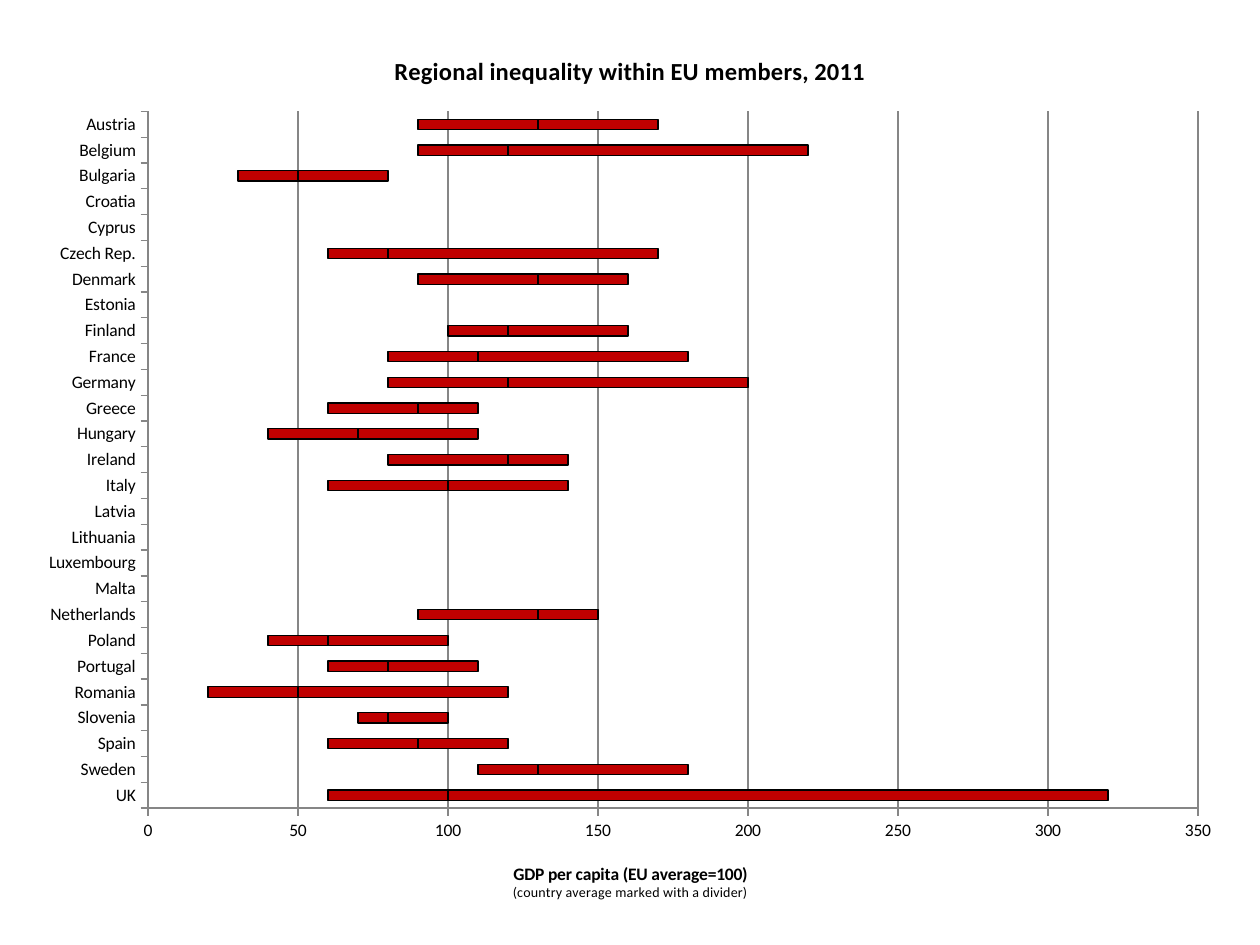
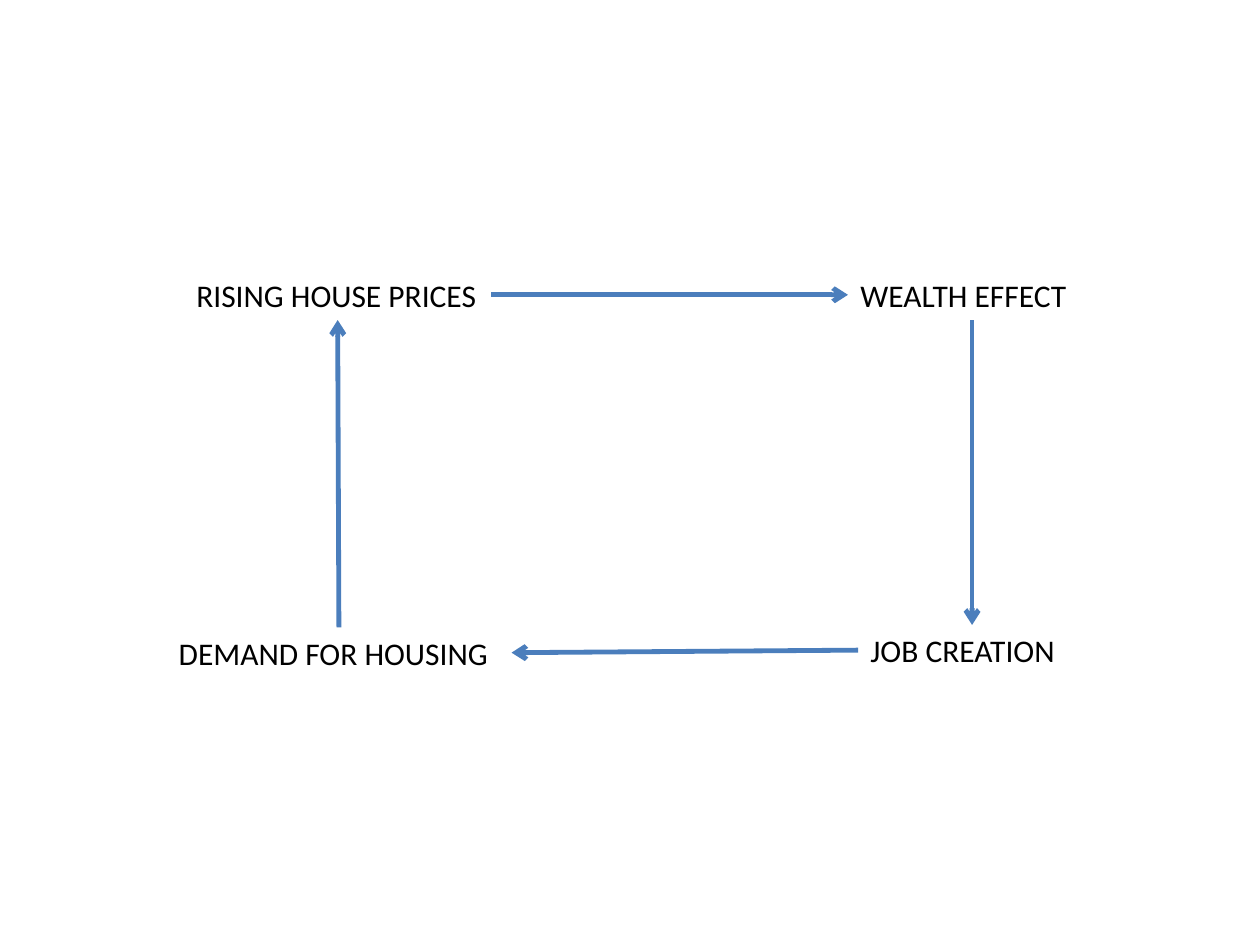
from collections import namedtuple

from lxml import etree
from pptx import Presentation
from pptx import util as u
from pptx.chart.data import CategoryChartData
from pptx.dml.color import RGBColor
from pptx.enum import chart as charts, shapes, text
from pptx.oxml import ns

# Boxes are measured in cells of a grid of 100 columns and 75 rows
Box = namedtuple("Box", "left top width height")

COLUMNS, ROWS = 100, 75
CELL = u.Inches(0.1)
FONT = "Calibri"
BLACK, RED, GREY, BLUE = "000000", "C00000", "868686", "4B7EBC"
TOP, LEFT, BOTTOM, RIGHT = range(4)

# Country: lowest region, step up to country average, step up to highest region
REGIONAL_GDP = {
    "UK": (60, 40, 220), "Sweden": (110, 20, 50), "Spain": (60, 30, 30),
    "Slovenia": (70, 10, 20), "Romania": (20, 30, 70),
    "Portugal": (60, 20, 30), "Poland": (40, 20, 40),
    "Netherlands": (90, 40, 20), "Malta": (90, 0, 0),
    "Luxembourg": (270, 0, 0), "Lithuania": (70, 0, 0),
    "Latvia": (60, 0, 0), "Italy": (60, 40, 40), "Ireland": (80, 40, 20),
    "Hungary": (40, 30, 40), "Greece": (60, 30, 20),
    "Germany": (80, 40, 80), "France": (80, 30, 70),
    "Finland": (100, 20, 40), "Estonia": (70, 0, 0),
    "Denmark": (90, 40, 30), "Czech Rep.": (60, 20, 90),
    "Cyprus": (90, 0, 0), "Croatia": (60, 0, 0), "Bulgaria": (30, 20, 30),
    "Belgium": (90, 30, 100), "Austria": (90, 40, 40),
}


def colour(value):
    return RGBColor.from_string(value)


def on_slide(box):
    """Turn a box in cells into lengths on the slide."""
    return [int(cells * CELL) for cells in box]


def style_font(font, size=10, bold=False, fill=BLACK):
    font.name, font.size, font.bold = FONT, u.Pt(size), bold
    font.color.rgb = colour(fill)


def write(paragraph, words, **style):
    run = paragraph.add_run()
    run.text = words
    style_font(run.font, **style)


def style_line(line, fill, width):
    line.color.rgb = colour(fill)
    line.width = u.Pt(width)


def place_chart_part(element, index, box, left, top, width=None, height=None):
    """Fix a title, or a plot area with its size, in cells from the chart's corner."""
    for old in element.findall(ns.qn("c:layout")):
        element.remove(old)
    settings = {"xMode": "edge", "yMode": "edge",
                "x": left / box.width, "y": top / box.height}
    if width:
        settings = {"layoutTarget": "inner", **settings,
                    "w": width / box.width, "h": height / box.height}
    layout = etree.Element(ns.qn("c:layout"))
    manual = etree.SubElement(layout, ns.qn("c:manualLayout"))
    for name, value in settings.items():
        etree.SubElement(manual, ns.qn("c:" + name)).set("val", str(value))
    element.insert(index, layout)


def add_inequality_chart(slide, box):
    data = CategoryChartData()
    data.categories = list(REGIONAL_GDP)
    for number, values in enumerate(zip(*REGIONAL_GDP.values()), start=1):
        data.add_series(f"Series {number}", values)
    chart = slide.shapes.add_chart(
        charts.XL_CHART_TYPE.BAR_STACKED, *on_slide(box), data).chart
    chart.has_legend = False
    style_font(chart.font)

    plot = chart.plots[0]
    plot.gap_width, plot.overlap, plot.vary_by_categories = 150, 100, False
    hidden, *ranges = plot.series
    hidden.format.fill.background()
    hidden.format.line.fill.background()
    for series in ranges:
        series.format.fill.solid()
        series.format.fill.fore_color.rgb = colour(RED)
        style_line(series.format.line, BLACK, 0.75)

    for axis in (chart.category_axis, chart.value_axis):
        axis.major_tick_mark = charts.XL_TICK_MARK.OUTSIDE
        axis.minor_tick_mark = charts.XL_TICK_MARK.NONE
        style_line(axis.format.line, GREY, 0.75)
    scale = chart.value_axis
    scale.minimum_scale, scale.maximum_scale, scale.major_unit = 0, 350, 50
    scale.has_major_gridlines = True
    style_line(scale.major_gridlines.format.line, GREY, 0.75)

    chart.has_title = True
    write(chart.chart_title.text_frame.paragraphs[0],
          "Regional inequality within EU members, 2011", size=14, bold=True)
    caption = scale.axis_title.text_frame
    write(caption.paragraphs[0], "GDP per capita (EU average=100)", bold=True)
    write(caption.add_paragraph(), "(country average marked with a divider)", size=8)

    place_chart_part(chart.chart_title.element, 1, box, 28.95, 1.8)
    place_chart_part(scale.axis_title.element, 1, box, 38.4, 66)
    plot_area = chart.element.find(".//" + ns.qn("c:plotArea"))
    place_chart_part(plot_area, 0, box, 9.75, 6.75, 83.33, 55.3)


def add_label(slide, box, words):
    label = slide.shapes.add_textbox(*on_slide(box))
    frame = label.text_frame
    frame.word_wrap = False
    frame.auto_size = text.MSO_AUTO_SIZE.SHAPE_TO_FIT_TEXT
    write(frame.paragraphs[0], words, size=18)
    return label


def add_arrow(slide, start, start_side, end, end_side):
    arrow = slide.shapes.add_connector(shapes.MSO_CONNECTOR.STRAIGHT, 0, 0, 0, 0)
    arrow.begin_connect(start, start_side)
    arrow.end_connect(end, end_side)
    style_line(arrow.line, BLUE, 2.75)
    line = arrow.element.spPr.find(ns.qn("a:ln"))
    etree.SubElement(line, ns.qn("a:tailEnd")).set("type", "arrow")
    etree.SubElement(arrow.element.spPr, ns.qn("a:effectLst"))


def add_housing_cycle(slide, box):
    """Four labels, clockwise from the top left, each leading to the next."""
    height = 4
    bottom = box.height - height
    prices, wealth, jobs, demand = [
        add_label(slide, Box(box.left + left, box.top + top, width, height), words)
        for words, left, top, width in (
            ("RISING HOUSE PRICES", 1.4, 0, 24.4),
            ("WEALTH EFFECT", 54.1, 0, 19.7),
            ("JOB CREATION", 54.9, bottom - 0.2, 18.1),
            ("DEMAND FOR HOUSING", 0, bottom, 27.4),
        )
    ]
    add_arrow(slide, prices, RIGHT, wealth, LEFT)
    add_arrow(slide, wealth, BOTTOM, jobs, TOP)
    add_arrow(slide, jobs, LEFT, demand, RIGHT)
    add_arrow(slide, demand, TOP, prices, BOTTOM)


def main():
    presentation = Presentation()
    presentation.slide_width = COLUMNS * CELL
    presentation.slide_height = ROWS * CELL
    blank = presentation.slide_layouts[6]
    for build, box in (
        (add_inequality_chart, Box(2, 2.1, 96.1, 71.7)),
        (add_housing_cycle, Box(13.2, 21.4, 73.8, 32.4)),
    ):
        build(presentation.slides.add_slide(blank), box)
    presentation.save("out.pptx")


if __name__ == "__main__":
    main()
